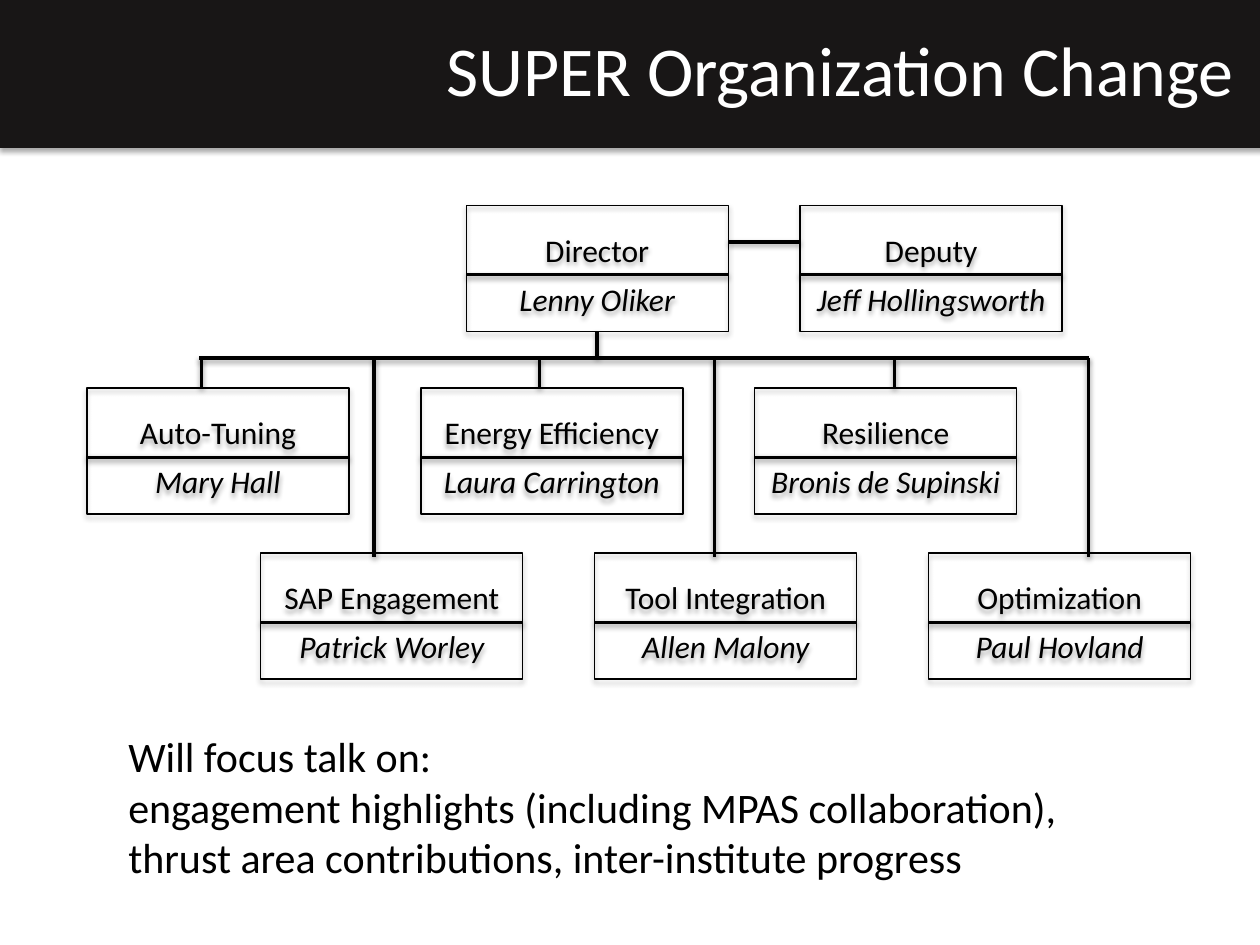
import dataclasses

import lxml.etree
import pptx
import pptx.dml.color
import pptx.enum.shapes
import pptx.enum.text
import pptx.oxml
import pptx.oxml.ns
import pptx.util

Inches, Pt = pptx.util.Inches, pptx.util.Pt
RGB = pptx.dml.color.RGBColor.from_string
RECTANGLE = pptx.enum.shapes.MSO_SHAPE.RECTANGLE
STRAIGHT = pptx.enum.shapes.MSO_CONNECTOR.STRAIGHT
ALIGN, ANCHOR = pptx.enum.text.PP_ALIGN, pptx.enum.text.MSO_ANCHOR


@dataclasses.dataclass(frozen=True)
class Theme:
    """Colours, type sizes and line widths of the slide."""
    font: str = "Calibri"
    ink: str = "000000"
    banner: str = "181616"
    banner_ink: str = "FFFFFF"
    title_size: int = 40
    note_size: int = 24
    role_size: int = 18
    border: float = 0.75
    rule: float = 2


THEME = Theme()
SLIDE_WIDTH, SLIDE_HEIGHT = 10, 7.5
BOX_WIDTH, BOX_HEIGHT, COLUMN_PITCH = 2.08, 1, 2.65
RULE_SHARE = 0.55
BUS_Y, BUS_LEFT = 2.84, 1.58
DEPUTY_LINK_Y = 1.92
LEADERS_TOP, UPPER_TOP, LOWER_TOP = 1.63, 3.08, 4.39
LOWER_DROP_END = LOWER_TOP + 0.03

LEADERS = [("Director", "Lenny Oliker"), ("Deputy", "Jeff Hollingsworth")]
UPPER_AREAS = [
    ("Auto-Tuning", "Mary Hall"),
    ("Energy Efficiency", "Laura Carrington"),
    ("Resilience", "Bronis de Supinski"),
]
LOWER_AREAS = [
    ("SAP Engagement", "Patrick Worley"),
    ("Tool Integration", "Allen Malony"),
    ("Optimization", "Paul Hovland"),
]
UPPER_DROPS = [1.6, 4.28, 7.1]
LOWER_DROPS = [2.97, 5.67, 8.64]
FOCUS = [
    ["Will focus talk on:"],
    ["engagement highlights (including MPAS collaboration),",
     "thrust area contributions, inter-institute progress"],
]


def write(frame, paragraphs, size, color=THEME.ink, align=ALIGN.LEFT,
          spacing=None, italic_lines=(), wrap=True, anchor=ANCHOR.TOP):
    """Fill a text frame with paragraphs, each a list of lines."""
    frame.word_wrap, frame.vertical_anchor = wrap, anchor
    for number, lines in enumerate(paragraphs):
        paragraph = frame.add_paragraph() if number else frame.paragraphs[0]
        paragraph.alignment, paragraph.line_spacing = align, spacing
        paragraph.font.size = Pt(size)
        for index, line in enumerate(lines):
            if index:
                paragraph.add_line_break()
            run = paragraph.add_run()
            run.text = line
            run.font.name, run.font.size = THEME.font, Pt(size)
            run.font.color.rgb = RGB(color)
            run.font.italic = index in italic_lines


def add_shadow(shape, opacity, distance):
    """Give a shape or connector a soft shadow straight below it."""
    effects = pptx.oxml.parse_xml(
        f'<a:effectLst {pptx.oxml.ns.nsdecls("a")}>'
        f'<a:outerShdw blurRad="{Pt(3.1)}" dist="{Pt(distance)}" dir="5400000" rotWithShape="0">'
        f'<a:srgbClr val="{THEME.ink}"><a:alpha val="{opacity * 1000}"/></a:srgbClr>'
        '</a:outerShdw></a:effectLst>')
    shape.element.spPr.append(effects)


def add_rectangle(shapes, left, top, width, height, line, fill=None):
    """Add a bordered rectangle with a shadow."""
    rectangle = shapes.add_shape(
        RECTANGLE, Inches(left), Inches(top), Inches(width), Inches(height))
    if fill:
        rectangle.fill.solid()
        rectangle.fill.fore_color.rgb = RGB(fill)
    else:
        rectangle.fill.background()
    rectangle.line.color.rgb = RGB(line)
    rectangle.line.width = Pt(THEME.border)
    add_shadow(rectangle, 35, 1.8)
    return rectangle


def add_line(shapes, start, end):
    """Add a straight chart line between two points."""
    line = shapes.add_connector(STRAIGHT, *map(Inches, (*start, *end)))
    line.line.color.rgb = RGB(THEME.ink)
    line.line.width = Pt(THEME.rule)
    add_shadow(line, 38, 1.6)
    return line


def add_member(slide, left, top, role, person):
    """Add a grouped box with a role above its rule and a person below."""
    member = slide.shapes.add_group_shape()
    box = add_rectangle(member.shapes, left, top, BOX_WIDTH, BOX_HEIGHT, THEME.ink)
    write(box.text_frame, [[role, person]], THEME.role_size, align=ALIGN.CENTER,
          spacing=1.3, italic_lines=(1,), wrap=False, anchor=ANCHOR.MIDDLE)
    rule_y = top + BOX_HEIGHT * RULE_SHARE
    add_line(member.shapes, (left, rule_y), (left + BOX_WIDTH, rule_y))
    return box


def add_row(slide, left, top, members):
    """Add a row of evenly spaced member boxes."""
    return [add_member(slide, left + column * COLUMN_PITCH, top, *member)
            for column, member in enumerate(members)]


def add_text(slide, left, top, width, height, paragraphs, size, **style):
    """Add a text box and write into it."""
    box = slide.shapes.add_textbox(*map(Inches, (left, top, width, height)))
    write(box.text_frame, paragraphs, size, **style)


def add_banner(slide):
    """Add the dark title band and the title."""
    top, height = -0.08, SLIDE_HEIGHT / 6
    add_rectangle(slide.shapes, 0, top, SLIDE_WIDTH + 0.08, height,
                  THEME.banner, fill=THEME.banner)
    add_text(slide, SLIDE_WIDTH / 3, top, SLIDE_WIDTH * 2 / 3, height,
             [["SUPER Organization Change"]], THEME.title_size,
             color=THEME.banner_ink, align=ALIGN.CENTER, anchor=ANCHOR.MIDDLE)


def add_reporting_lines(slide, director, director_left):
    """Link the director to the deputy and to every area."""
    shapes = slide.shapes
    add_line(shapes, (director_left + BOX_WIDTH, DEPUTY_LINK_Y),
             (director_left + COLUMN_PITCH, DEPUTY_LINK_Y))
    trunk_x = director_left + BOX_WIDTH / 2
    trunk = add_line(shapes, (trunk_x, BUS_Y), (trunk_x, LEADERS_TOP + BOX_HEIGHT))
    trunk.end_connect(director, 2)
    add_line(shapes, (BUS_LEFT, BUS_Y), (LOWER_DROPS[-1], BUS_Y))
    for drops, end_y in ((UPPER_DROPS, UPPER_TOP), (LOWER_DROPS, LOWER_DROP_END)):
        for x in drops:
            add_line(shapes, (x, end_y), (x, BUS_Y))


def main():
    """Build the organization slide and save it."""
    deck = pptx.Presentation()
    deck.slide_width, deck.slide_height = Inches(SLIDE_WIDTH), Inches(SLIDE_HEIGHT)
    slide = deck.slides.add_slide(deck.slide_layouts[6])
    add_banner(slide)
    add_row(slide, 0.69, UPPER_TOP, UPPER_AREAS)
    add_row(slide, 2.07, LOWER_TOP, LOWER_AREAS)
    director_left = 3.7
    director, _ = add_row(slide, director_left, LEADERS_TOP, LEADERS)
    add_reporting_lines(slide, director, director_left)
    add_text(slide, 0.92, 5.75, 8.17, 1.31, FOCUS, THEME.note_size)
    deck.save("out.pptx")


if __name__ == "__main__":
    main()
